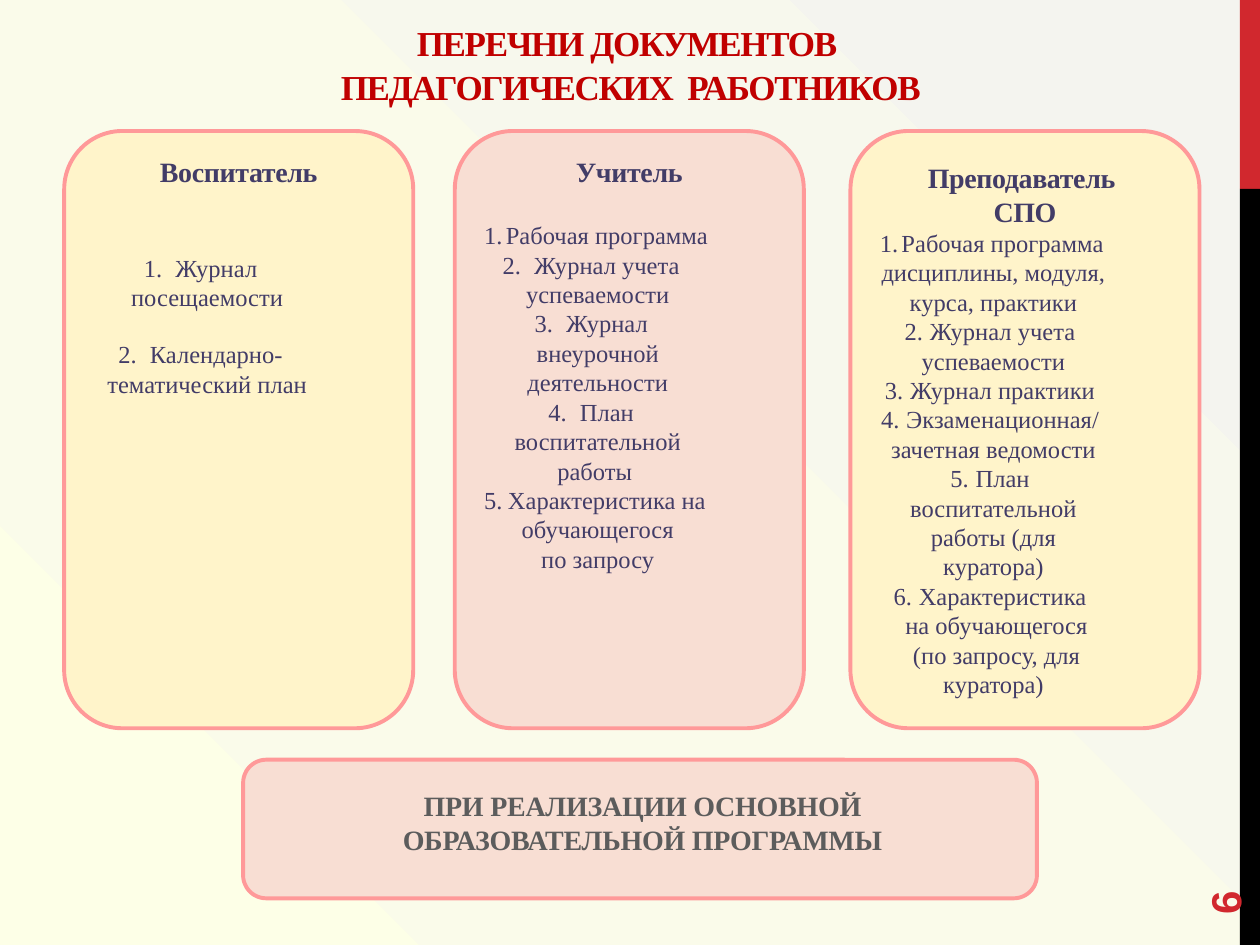
"""Build the slide listing the documents kept by teaching staff."""
from pptx import Presentation
from pptx.dml.color import RGBColor
from pptx.enum.shapes import MSO_SHAPE
from pptx.enum.text import MSO_ANCHOR, MSO_AUTO_SIZE, PP_ALIGN
from pptx.oxml import parse_xml
from pptx.oxml.ns import nsdecls
from pptx.util import Inches, Pt


def color(target, value):
    if hasattr(target, "solid"):
        target.solid()
        target = target.fore_color
    target.rgb = RGBColor.from_string(value)


def write(p, text, size, value, bold=True, spc=0, font="Times New Roman", **para):
    r = p.add_run()
    r.text = text
    for key, val in {"name": font, "size": Pt(size), "bold": bold}.items():
        setattr(r.font, key, val)
    color(r.font.color, value)
    r.font._element.set("spc", str(round(spc * 100)))
    for key, val in {"alignment": PP_ALIGN.CENTER, **para}.items():
        setattr(p, key, val)


prs = Presentation()
prs.slide_width, prs.slide_height = Inches(10), Inches(7.5)
s = prs.slides.add_slide(prs.slide_layouts[5])

s.background.fill.solid()
bg = s.element.xpath(".//p:bgPr")[0]
stops = "".join(
    f'<a:gs pos="{pos * 1000}"><a:srgbClr val="{value}"/></a:gs>'
    for pos, value in [(0, "FDFFE7"), (38, "FAFBEA"), (99, "F4F4EF")]
)
bg.replace(bg[0], parse_xml(
    f'<a:gradFill {nsdecls("a")} rotWithShape="1"><a:gsLst>{stops}</a:gsLst>'
    '<a:path path="circle"><a:fillToRect l="0" t="100000" r="100000" b="0"/></a:path>'
    '</a:gradFill>'
))

for top, height, value in [(0, 1.5, "D1282E"), (1.5, 6, "000000")]:
    sp = s.shapes.add_shape(MSO_SHAPE.RECTANGLE, Inches(9.84), Inches(top), Inches(0.16), Inches(height))
    sp.shadow.inherit = False
    color(sp.fill, value)
    sp.line.fill.background()

number = s.shapes.add_textbox(Inches(9), Inches(6.44), Inches(1.44), Inches(0.4))
number.rotation = 270
number.text_frame.word_wrap = True
number.text_frame.vertical_anchor = MSO_ANCHOR.MIDDLE
write(number.text_frame.paragraphs[0], "6", 24, "D1282E", font="Arial", alignment=PP_ALIGN.LEFT)

title = s.shapes.title
title.left, title.top, title.width, title.height = [Inches(v) for v in (0.2, 0.16, 9.61, 0.7)]
tf = title.text_frame
frame = {"margin_left": 0, "margin_top": Inches(0.01), "margin_right": 0, "margin_bottom": 0,
         "vertical_anchor": MSO_ANCHOR.TOP, "auto_size": MSO_AUTO_SIZE.NONE, "word_wrap": True}
for key, val in frame.items():
    setattr(tf, key, val)
for i, text in enumerate(["ПЕРЕЧНИ ДОКУМЕНТОВ ", "ПЕДАГОГИЧЕСКИХ  РАБОТНИКОВ"]):
    p = tf.add_paragraph() if i else tf.paragraphs[0]
    write(p, text, 20, "C00000", spc=-0.8, space_before=Pt(1))

columns = [
    (0.51, "FFF4CA", MSO_ANCHOR.TOP, 0.25, 37, 16, ["Воспитатель"],
     ["Журнал посещаемости", "Календарно-тематический план"], []),
    (3.61, "F8DED3", MSO_ANCHOR.TOP, 0.25, 18.5, 0, ["Учитель"],
     ["Рабочая программа", "Журнал учета успеваемости", "Журнал внеурочной деятельности",
      "План воспитательной работы ", "Характеристика на обучающегося"],
     [" по запросу "]),
    (6.75, "FFF4CA", MSO_ANCHOR.MIDDLE, 0.2, 0, 0, ["Преподаватель ", "СПО"],
     ["Рабочая программа дисциплины, модуля, курса, практики", "Журнал учета успеваемости",
      "Журнал практики", "Экзаменационная/ зачетная ведомости",
      "План воспитательной работы (для куратора)", "Характеристика"],
     [" на обучающегося", " (по запросу, для куратора)"]),
]
boxes = [(left, 1.04, 2.77, 4.74, fill) for left, fill, *rest in columns]
boxes.append((1.93, 6.03, 6.3, 1.1, "F8DED3"))
cards = []
for *place, fill in boxes:
    sp = s.shapes.add_shape(MSO_SHAPE.ROUNDED_RECTANGLE, *[Inches(v) for v in place])
    sp.shadow.inherit = False
    color(sp.fill, fill)
    color(sp.line.fill, "FF9999")
    sp.line.width = Pt(2.25)
    cards.append(sp)

for sp, (left, fill, anchor, hang, lead, gap, heads, items, tail) in zip(cards, columns):
    tf = sp.text_frame
    tf.word_wrap = True
    tf.vertical_anchor = anchor
    for i, text in enumerate(heads):
        p = tf.add_paragraph() if i else tf.paragraphs[0]
        write(p, text, 16, "423C67", spc=-0.2)
    for i, text in enumerate(items + tail):
        p = tf.add_paragraph()
        write(p, text, 14, "423C67", bold=False, space_before=Pt(gap if i else lead))
        pPr = p._p.get_or_add_pPr()
        pPr.set("marR", str(Inches(0.5)))
        if i < len(items):
            pPr.set("marL", "0")
            pPr.set("indent", str(-Inches(hang)))
            pPr.append(parse_xml(f'<a:buFont {nsdecls("a")} typeface="+mj-lt"/>'))
            pPr.append(parse_xml(f'<a:buAutoNum {nsdecls("a")} type="arabicPeriod"/>'))
        pPr.append(parse_xml(
            f'<a:tabLst {nsdecls("a")}><a:tab pos="{Inches(0.57)}" algn="l"/></a:tabLst>'
        ))

note = s.shapes.add_textbox(Inches(2.21), Inches(6.21), Inches(5.78), Inches(0.64))
note.text_frame.word_wrap = True
write(note.text_frame.paragraphs[0], "ПРИ РЕАЛИЗАЦИИ ОСНОВНОЙ ОБРАЗОВАТЕЛЬНОЙ ПРОГРАММЫ",
      16, "5C5C5C", spc=-0.1)

prs.save("out.pptx")
